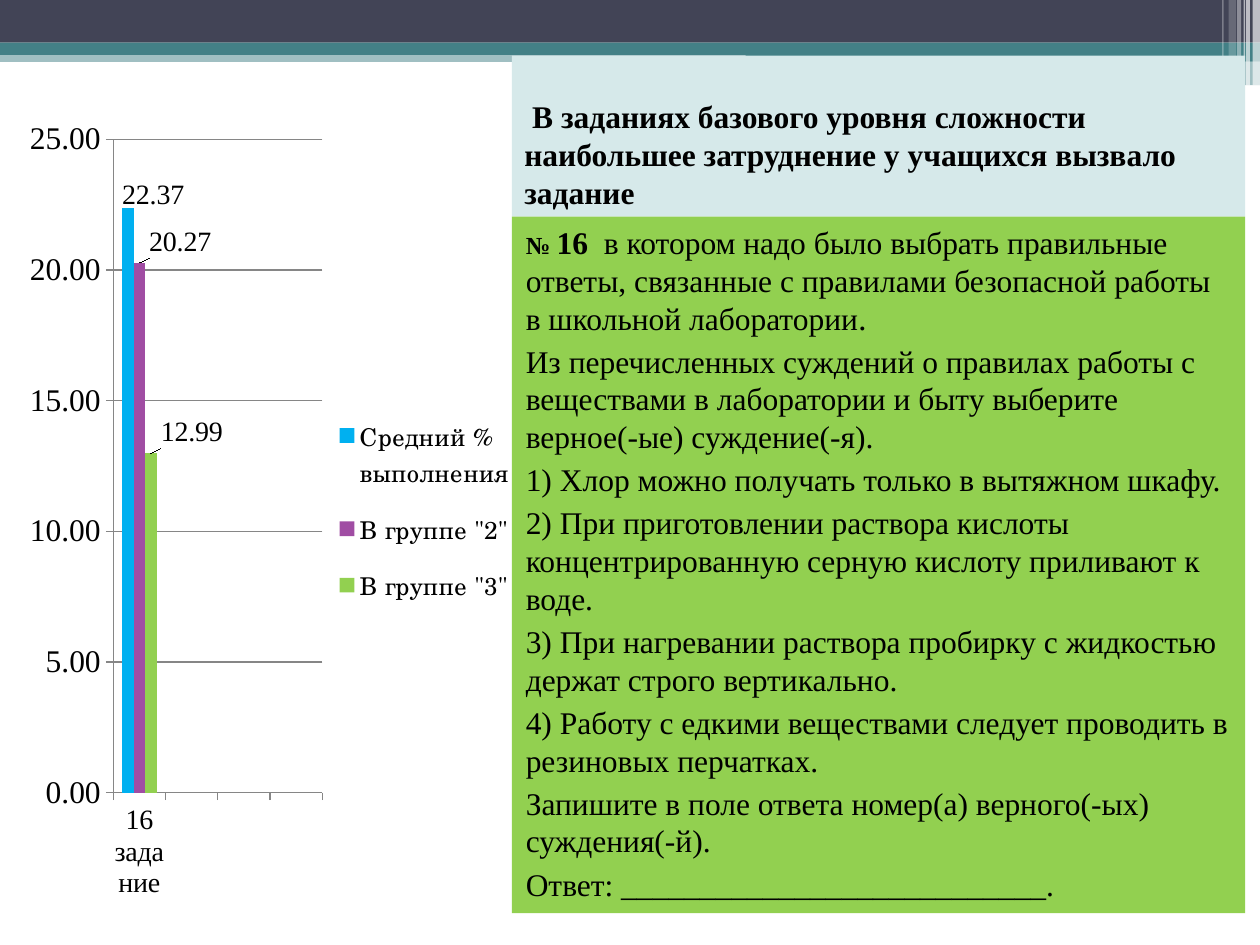
"""Builds a slide with a task result chart beside the wording of task 16."""
from lxml import etree
from pptx import Presentation
from pptx.chart.data import CategoryChartData as ChartData
from pptx.dml.color import RGBColor as Color
from pptx.enum.chart import XL_CHART_TYPE as ChartType
from pptx.enum.chart import XL_LABEL_POSITION as LabelPosition
from pptx.enum.chart import XL_LEGEND_POSITION as LegendPosition
from pptx.enum.chart import XL_TICK_MARK as TickMark
from pptx.enum.shapes import MSO_SHAPE as Shape
from pptx.enum.text import MSO_ANCHOR as Anchor
from pptx.oxml.ns import qn
from pptx.util import Cm, Pt

COLORS = {
    "navy": "424456", "teal": "438086", "white": "FFFFFF", "black": "000000",
    "pale": "D6E9EA", "green": "92D050", "blue": "00B0F0", "purple": "A04DA3",
    "gray": "868686",
}
SERIF = "Times New Roman"
SCHOOL = "TeX Gyre Schola"


def add_text(para, text, size=18, font=SERIF, bold=False):
    span = para.add_run()
    span.text = text
    span.font.size = Pt(size)
    span.font.name = font
    span.font.bold = bold
    span.font.color.rgb = Color.from_string(COLORS["black"])


def set_layout(parent, index, **settings):
    for old in parent.findall(qn("c:layout")):
        parent.remove(old)
    layout = etree.Element(qn("c:layout"))
    manual = etree.SubElement(layout, qn("c:manualLayout"))
    for key, value in settings.items():
        etree.SubElement(manual, qn(f"c:{key}"), val=str(value))
    parent.insert(index, layout)


deck = Presentation()
deck.slide_width, deck.slide_height = Cm(25.4), Cm(19.05)
page = deck.slides.add_slide(deck.slide_layouts[6])

blocks = [
    (0, 1.02, 25.4, 0.23, "teal", 50),
    (0, 0, 25.4, 0.86, "navy", 100),
    (0, 0.86, 25.4, 0.25, "teal", 100),
    (15.03, 0.98, 10.37, 0.25, "teal", 100),
    (15.03, 1.22, 10.37, 0.5, "teal", 50),
    (25.25, 0, 0.15, 1.73, "white", 65),
    (25.12, 0, 0.08, 1.73, "white", 65),
    (25.07, 0, 0.03, 1.73, "white", 60),
    (24.94, 0, 0.08, 1.73, "white", 40),
    (24.77, 0, 0.15, 1.63, "white", 20),
    (24.64, 0, 0.03, 1.63, "white", 30),
    (10.32, 1.12, 14.78, 3.25, "pale", 100),
    (10.32, 4.37, 14.78, 14.04, "green", 100),
]
shapes = []
for left, top, width, height, color, alpha in blocks:
    block = page.shapes.add_shape(
        Shape.RECTANGLE, Cm(left), Cm(top), Cm(width), Cm(height))
    block.shadow.inherit = False
    block.line.fill.background()
    block.fill.solid()
    block.fill.fore_color.rgb = Color.from_string(COLORS[color])
    if alpha < 100:
        tint = block.fill._xPr.find(".//" + qn("a:srgbClr"))
        etree.SubElement(tint, qn("a:alpha"), val=str(alpha * 1000))
    shapes.append(block)
title, body = shapes[-2:]

heading = [[(" В заданиях базового уровня сложности наибольшее затруднение "
             "у учащихся вызвало задание", {"bold": True})]]
task = [
    [("№ ", {"size": 14, "bold": True}),
     ("16  ", {"bold": True}),
     ("в котором надо было выбрать правильные ответы, связанные с правилами "
      "безопасной работы в школьной лаборатории", {}),
     (".", {"font": SCHOOL})],
    [("Из перечисленных суждений о правилах работы с веществами в лаборатории "
      "и быту выберите верное(-ые) суждение(-я).", {})],
    [("1) Хлор можно получать только в вытяжном шкафу.", {})],
    [("2) При приготовлении раствора кислоты концентрированную серную кислоту "
      "приливают к воде.", {})],
    [("3) При нагревании раствора пробирку с жидкостью держат строго "
      "вертикально.", {})],
    [("4) Работу с едкими веществами следует проводить в резиновых "
      "перчатках.", {})],
    [("Запишите в поле ответа номер(а) верного(-ых) суждения(-й).", {})],
    [("Ответ: ___________________________.", {})],
]
for box, paragraphs, anchor, indent, space in (
        (title, heading, Anchor.BOTTOM, 0, 0),
        (body, task, Anchor.TOP, 0.03, 3)):
    frame = box.text_frame
    frame.word_wrap = True
    frame.vertical_anchor = anchor
    for index, spans in enumerate(paragraphs):
        para = frame.add_paragraph() if index else frame.paragraphs[0]
        properties = para._p.get_or_add_pPr()
        properties.set("marL", str(Cm(indent)))
        properties.set("algn", "l")
        para.space_before = Pt(space)
        for text, style in spans:
            add_text(para, text, **style)

results = [
    ("Средний % выполнения", 22.37, "blue", 0.05, 0.01),
    ('В группе "2"', 20.27, "purple", 0.08, 0),
    ('В группе "3"', 12.99, "green", 0.08, 0),
]
data = ChartData(number_format="0.00")
data.categories = ["16 задание", "", "", ""]
for name, value, *look in results:
    data.add_series(name, [value, None, None, None])
chart = page.shapes.add_chart(
    ChartType.COLUMN_CLUSTERED, Cm(0.43), Cm(2.16), Cm(10.29), Cm(16.26),
    data).chart
chart.has_title = False
chart.font.size = Pt(18)
chart.font.name = SCHOOL
chart.font.color.rgb = Color.from_string(COLORS["black"])

plot = chart.plots[0]
plot.gap_width = 150
plot.overlap = 0
plot.vary_by_categories = False
for series, (name, value, color, shift, drop) in zip(plot.series, results):
    series.format.fill.solid()
    series.format.fill.fore_color.rgb = Color.from_string(COLORS[color])
    labels = series.data_labels
    labels.show_value = True
    labels.number_format = "0.00"
    labels.number_format_is_linked = False
    label = series.points[0].data_label
    for item in (labels, label):
        item.position = LabelPosition.OUTSIDE_END
        item.font.size = Pt(16)
        item.font.name = SERIF
    set_layout(labels._element.find(qn("c:dLbl")), 1, x=shift, y=drop)

values = chart.value_axis
values.minimum_scale, values.maximum_scale, values.major_unit = 0, 25, 5
values.has_major_gridlines = True
values.tick_labels.number_format = "0.00"
values.tick_labels.number_format_is_linked = False
for axis, size in ((chart.category_axis, 16), (values, 18)):
    axis.major_tick_mark = TickMark.OUTSIDE
    axis.tick_labels.font.size = Pt(size)
    axis.tick_labels.font.name = SERIF
    axis.format.line.color.rgb = Color.from_string(COLORS["gray"])
values.major_gridlines.format.line.color.rgb = Color.from_string(COLORS["gray"])

chart.has_legend = True
legend = chart.legend
legend.position = LegendPosition.RIGHT
legend.include_in_layout = False
legend.font.size = Pt(14)
set_layout(legend._element, 1, xMode="edge", yMode="edge",
           x=0.61, y=0.36, w=0.36, h=0.28)
set_layout(chart._chartSpace.find(".//" + qn("c:plotArea")), 0,
           layoutTarget="inner", xMode="edge", yMode="edge",
           x=0.18, y=0.04, w=0.41, h=0.81)

deck.save("out.pptx")
